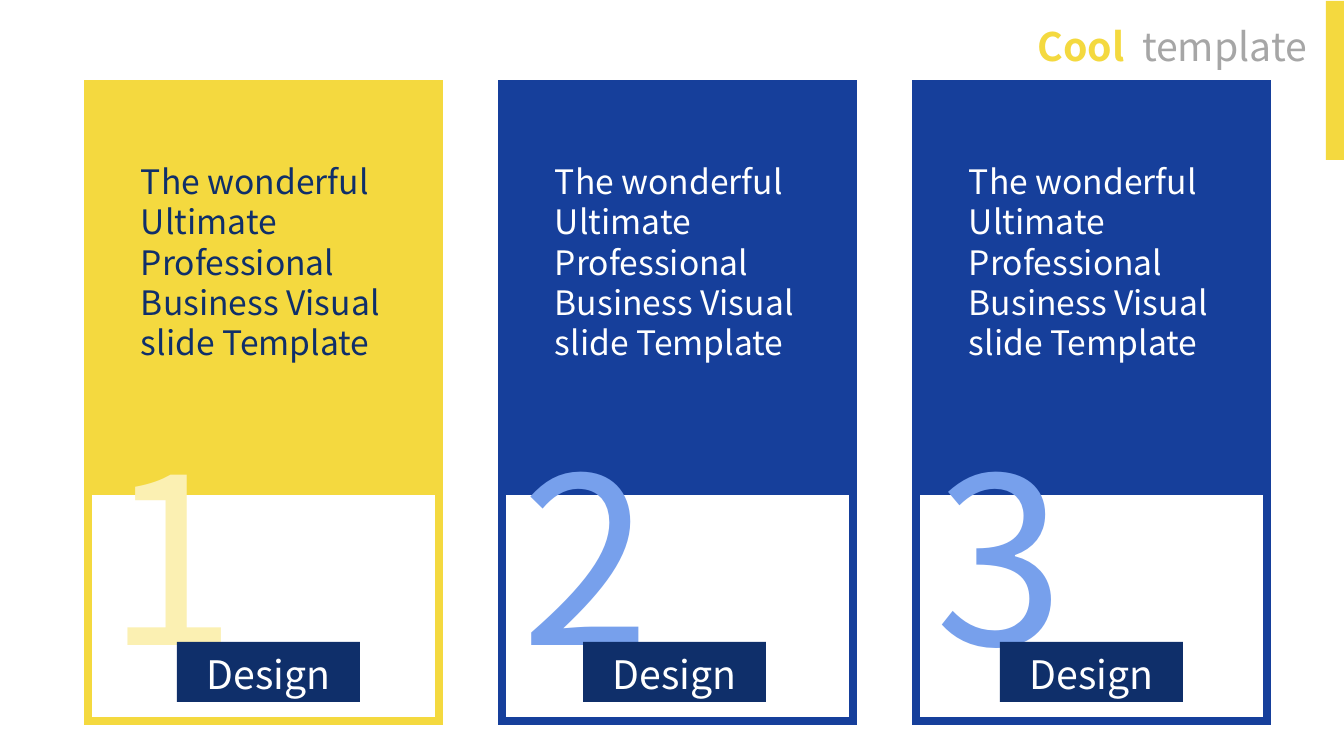
"""Build a slide of three numbered design cards."""
import lxml.etree
import pptx
import pptx.util
import pptx.dml.color
import pptx.enum.shapes
import pptx.enum.text
import pptx.oxml.ns

SCALE = 914400 / 100.8
FONT = "Noto Sans CJK JP"
YELLOW, BLUE, NAVY, WHITE = "F4D93F", "163F9B", "0F2F6A", "FFFFFF"
Pt = pptx.util.Pt
color = pptx.dml.color.RGBColor.from_string
align = pptx.enum.text.PP_ALIGN

deck = pptx.Presentation()
deck.slide_width = round(1344 * SCALE)
deck.slide_height = round(756 * SCALE)
slide = deck.slides.add_slide(deck.slide_layouts[5])


def add_rect(box, fill, line=None):
    rect = slide.shapes.add_shape(
        pptx.enum.shapes.MSO_SHAPE.RECTANGLE, *[round(n * SCALE) for n in box])
    rect.shadow.inherit = False
    rect.fill.solid()
    rect.fill.fore_color.rgb = color(fill)
    if line:
        rect.line.color.rgb = color(line)
        rect.line.width = Pt(5.5)
        edge = rect.line._get_or_add_ln()
        lxml.etree.SubElement(edge, pptx.oxml.ns.qn("a:miter"), lim="800000")
    else:
        rect.line.fill.background()
    return rect


def set_text(shape, text, size, ink, side=align.LEFT, wrap=True):
    frame = shape.text_frame
    frame.word_wrap = wrap
    frame.vertical_anchor = pptx.enum.text.MSO_ANCHOR.TOP
    frame.text = text
    para = frame.paragraphs[0]
    para.alignment = side
    para.font.name = FONT
    para.font.size = Pt(size)
    para.font.color.rgb = color(ink)
    return para


title = slide.shapes.title
title.left, title.top, title.width, title.height = [
    round(n * SCALE) for n in (1009, 17, 308, 57)]
para = set_text(title, "Cool", 28, YELLOW, align.RIGHT, False)
para.runs[0].font.bold = True
gap = para.add_run()
gap.text = " "
gap.font._element.set("spc", "630")
last = para.add_run()
last.text = "template"
last.font.color.rgb = color("A6A6A6")

cards = [
    ("1", YELLOW, NAVY, "FBF0B2", 177),
    ("2", BLUE, WHITE, "77A0EC", 583),
    ("3", BLUE, WHITE, "77A0EC", 1000),
]
for i, (digit, hue, ink, tint, tag_x) in enumerate(cards):
    x = 88 + 414 * i
    add_rect((x, 84, 351, 405), hue, hue)
    add_rect((x, 491, 351, 230), WHITE, hue)

    number = slide.shapes.add_textbox(
        *[round(n * SCALE) for n in (x + 10, 408, 166, 291)])
    set_text(number, digit, 166, tint, wrap=False)

    tag = add_rect((tag_x, 642, 183, 60), NAVY)
    tag.text_frame.margin_top = round(8 * SCALE)
    set_text(tag, "Design", 28, WHITE, align.CENTER)

    body = slide.shapes.add_textbox(
        *[round(n * SCALE) for n in (x + 43, 156, 266, 254)])
    set_text(body, "The wonderful Ultimate Professional Business Visual slide Template",
             24, ink)

add_rect((1326, 1, 18, 159), YELLOW)
deck.save("out.pptx")
